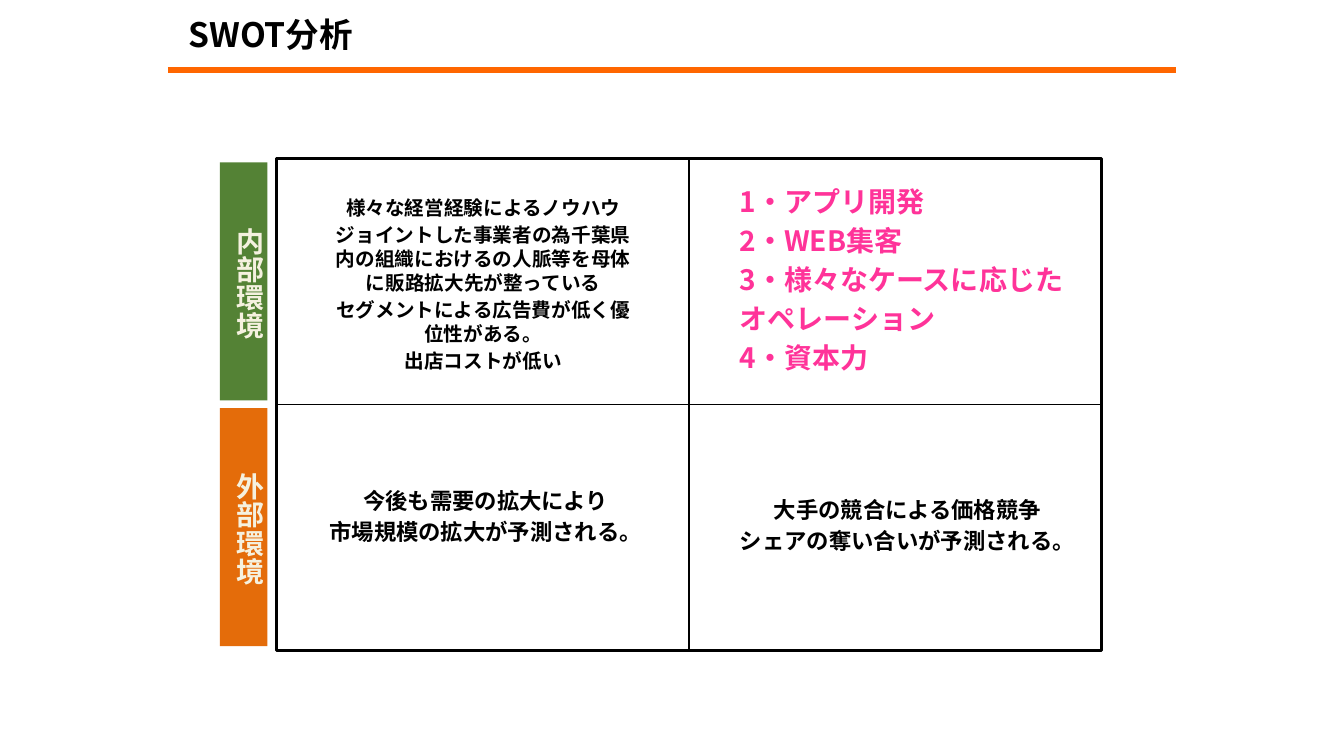
from dataclasses import dataclass

from lxml.etree import SubElement
from pptx import Presentation
from pptx.dml.color import RGBColor
from pptx.enum.shapes import MSO_CONNECTOR, MSO_SHAPE
from pptx.enum.text import MSO_ANCHOR, PP_ALIGN
from pptx.oxml.ns import qn
from pptx.util import Pt


@dataclass(frozen=True)
class Theme:
    """Colours, font and type sizes of the slide."""
    font: str = "Noto Sans CJK JP"
    ink: str = "000000"
    paper: str = "FFFFFF"
    accent: str = "FF6600"
    highlight: str = "FF3399"
    internal: str = "548235"
    external: str = "E46C0A"
    label_ink: str = "F5F1DF"
    title_size: int = 24
    label_size: int = 20
    highlight_size: int = 20
    body_size: int = 16
    small_size: int = 14


THEME = Theme()

STRENGTHS = [
    "様々な経営経験によるノウハウ",
    "ジョイントした事業者の為千葉県内の組織におけるの人脈等を母体に販路拡大先が整っている",
    "セグメントによる広告費が低く優位性がある。",
    "出店コストが低い",
]
WEAKNESSES = ["1・アプリ開発", "2・WEB集客", "3・様々なケースに応じた", "オペレーション", "4・資本力"]
OPPORTUNITIES = ["今後も需要の拡大により", "市場規模の拡大が予測される。"]
THREATS = ["大手の競合による価格競争", "シェアの奪い合いが予測される。"]


def style_runs(paragraph, size, color):
    """Format every run of a paragraph in the theme font, bold."""
    for run in paragraph.runs:
        run.font.size = Pt(size)
        run.font.bold = True
        run.font.name = THEME.font
        run.font.color.rgb = RGBColor.from_string(color)
        SubElement(run.font._element, qn("a:ea")).set("typeface", THEME.font)


def add_rectangle(slide, box, fill=None):
    """Add a rectangle without shadow or outline."""
    rectangle = slide.shapes.add_shape(MSO_SHAPE.RECTANGLE, *map(Pt, box))
    rectangle.shadow.inherit = False
    rectangle.line.fill.background()
    if fill:
        rectangle.fill.solid()
        rectangle.fill.fore_color.rgb = RGBColor.from_string(fill)
    else:
        rectangle.fill.background()
    return rectangle


def add_rule(slide, start, end, color, width):
    """Add a straight line between two points."""
    rule = slide.shapes.add_connector(MSO_CONNECTOR.STRAIGHT, *map(Pt, (*start, *end)))
    rule.line.color.rgb = RGBColor.from_string(color)
    rule.line.width = Pt(width)
    SubElement(rule._element.spPr, qn("a:effectLst"))
    return rule


def fill_lines(holder, lines, size, color, align):
    """Write lines as evenly spaced paragraphs centred in height."""
    frame = holder.text_frame
    frame.word_wrap = True
    frame.vertical_anchor = MSO_ANCHOR.MIDDLE
    frame.text = "\n".join(lines)
    for paragraph in frame.paragraphs:
        paragraph.alignment = align
        paragraph.line_spacing = Pt(1.2 * size)
        paragraph.space_before = Pt(0.2 * size)
        style_runs(paragraph, size, color)


def add_heading(slide, box):
    """Place the title and the rule under it."""
    left, top, width, height = box
    title = slide.shapes.add_textbox(Pt(left + 7.5), Pt(top), Pt(140), Pt(36))
    title.text_frame.word_wrap = False
    title.text_frame.vertical_anchor = MSO_ANCHOR.MIDDLE
    title.text_frame.text = "SWOT分析"
    style_runs(title.text_frame.paragraphs[0], THEME.title_size, THEME.ink)
    bottom = top + height
    add_rule(slide, (left, bottom), (left + width, bottom), THEME.accent, 4.5)


def add_matrix(slide, box):
    """Place the four quadrants, their frame and the dividing lines."""
    left, top, width, height = box
    middle_x, middle_y = left + width / 2, top + height / 2

    weaknesses = add_rectangle(slide, (middle_x, top, 312, 173), THEME.paper)
    fill_lines(weaknesses, WEAKNESSES, THEME.highlight_size, THEME.highlight, PP_ALIGN.LEFT)
    weaknesses.text_frame.margin_left = Pt(36)
    threats = add_rectangle(slide, (middle_x, middle_y, 312, 173), THEME.paper)
    fill_lines(threats, THREATS, THEME.body_size, THEME.ink, PP_ALIGN.CENTER)

    strengths = slide.shapes.add_textbox(Pt(left + 31.5), Pt(top + 10), Pt(232.5), Pt(160))
    fill_lines(strengths, STRENGTHS, THEME.small_size, THEME.ink, PP_ALIGN.CENTER)
    opportunities = slide.shapes.add_textbox(Pt(left - 6.5), Pt(middle_y + 40), Pt(312), Pt(80))
    fill_lines(opportunities, OPPORTUNITIES, THEME.body_size, THEME.ink, PP_ALIGN.CENTER)

    border = add_rectangle(slide, box)
    border.line.color.rgb = RGBColor.from_string(THEME.ink)
    border.line.width = Pt(2.25)
    dividers = [
        ((left, middle_y), (left + width, middle_y), 1, 3),
        ((middle_x, top), (middle_x, top + height), 0, 2),
    ]
    for start, end, start_side, end_side in dividers:
        divider = add_rule(slide, start, end, THEME.ink, 1)
        divider.begin_connect(border, start_side)
        divider.end_connect(border, end_side)


def add_environment(slide, box, name, color):
    """Place a coloured bar with its vertical label."""
    left, top, width, height = box
    add_rectangle(slide, box, color)
    label = slide.shapes.add_textbox(Pt(left - 2), Pt(top + 39.5), Pt(width + 5), Pt(88))
    frame = label.text_frame
    frame.word_wrap = False
    frame._txBody.bodyPr.set("vert", "eaVert")
    frame.text = name
    style_runs(frame.paragraphs[0], THEME.label_size, THEME.label_ink)


def main():
    """Build the SWOT slide and save it."""
    presentation = Presentation()
    presentation.slide_width, presentation.slide_height = Pt(960), Pt(540)
    slide = presentation.slides.add_slide(presentation.slide_layouts[6])
    add_matrix(slide, (197.5, 113, 589.5, 351.5))
    environments = [("内部環境", THEME.internal), ("外部環境", THEME.external)]
    for row, (name, color) in enumerate(environments):
        add_environment(slide, (157, 116 + row * 175.5, 34, 170), name, color)
    add_heading(slide, (120, 6.5, 720, 43.5))
    presentation.save("out.pptx")


if __name__ == "__main__":
    main()
